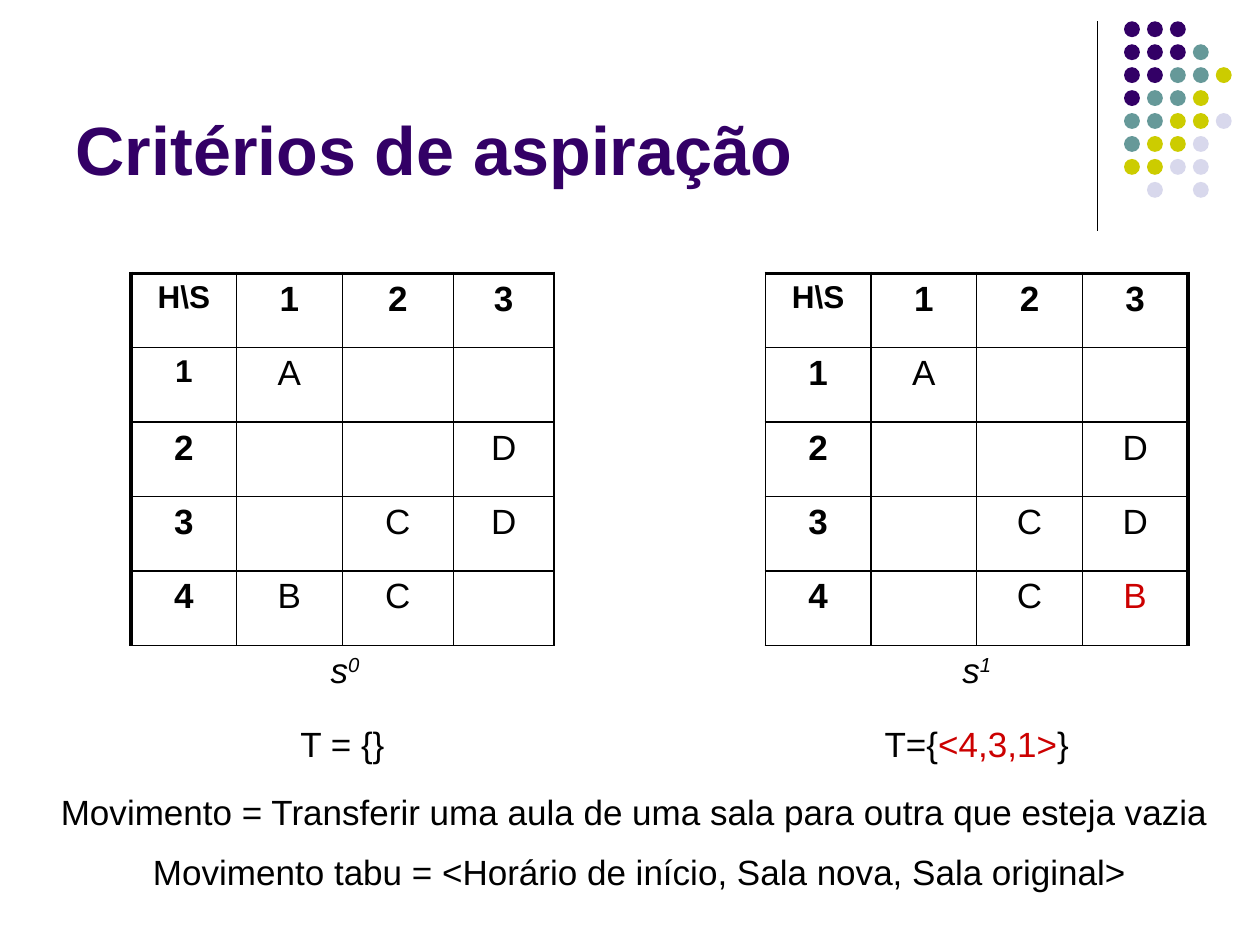
from dataclasses import dataclass
from typing import NamedTuple

from lxml import etree
from pptx import Presentation
from pptx.dml.color import RGBColor
from pptx.enum.dml import MSO_LINE
from pptx.enum.shapes import MSO_CONNECTOR, MSO_SHAPE
from pptx.enum.text import MSO_ANCHOR, MSO_AUTO_SIZE, PP_ALIGN
from pptx.oxml.ns import qn
from pptx.util import Cm, Pt

OVAL = MSO_SHAPE.OVAL
STRAIGHT = MSO_CONNECTOR.STRAIGHT
SOLID = MSO_LINE.SOLID
CENTER = PP_ALIGN.CENTER
LEFT = PP_ALIGN.LEFT
TOP = MSO_ANCHOR.TOP
BOTTOM = MSO_ANCHOR.BOTTOM
GROW = MSO_AUTO_SIZE.SHAPE_TO_FIT_TEXT

BLACK = RGBColor(0x00, 0x00, 0x00)
RED = RGBColor(0xCC, 0x00, 0x00)
PURPLE = RGBColor(0x33, 0x00, 0x66)
TEAL = RGBColor(0x66, 0x99, 0x99)
OLIVE = RGBColor(0xCC, 0xCC, 0x00)
LAVENDER = RGBColor(0xD8, 0xD8, 0xEC)

PLAIN = {"name": "Arial", "size": Pt(20), "bold": False}
BOLD = PLAIN | {"bold": True}
SMALL_BOLD = BOLD | {"size": Pt(18)}
ITALIC = PLAIN | {"italic": True}
HEADING = BOLD | {"size": Pt(39)}

DOT_COLORS = {"P": PURPLE, "T": TEAL, "O": OLIVE, "L": LAVENDER}
DOT_ROWS = ["PPP", "PPPT", "PPTTO", "PTTO", "TTOOL", "TOOL", "OOLL", " L L"]
DOT_LEFT, DOT_TOP, DOT_SIZE = 22.66, 0.43, 0.32
DOT_PITCH = 1.85 / 4

ROW_HEIGHT = 1.5
COLUMN_WIDTHS = [2.13, 2.13, 2.24, 2.03] + [2.13] * 6
NO_STYLE = "{2D5ABB26-0587-4C30-8999-92F81FD0307C}"
THIN, THICK = Pt(1), Pt(2.25)
HEADER = ["H\\S", "1", "2", "3"]


class Span(NamedTuple):
    text: str
    format: dict
    color: RGBColor = BLACK
    baseline: int = 0


@dataclass
class Schedule:
    column: int
    lessons: list[str]
    small_labels: set[tuple[int, int]]
    state: str
    tabu_list: list[Span]
    moved: tuple[int, int] | None = None


@dataclass
class Remark:
    left: float
    top: float
    width: float
    text: str


SCHEDULES = [
    Schedule(0, ["A  ", "  D", " CD", "BC "], {(0, 0), (1, 0)}, "0",
             [Span("T = {}", PLAIN)]),
    Schedule(6, ["A  ", "  D", " CD", " CB"], {(0, 0)}, "1",
             [Span("T={", PLAIN), Span("<4,3,1>", PLAIN, RED), Span("}", PLAIN)],
             moved=(4, 3)),
]
REMARKS = [
    Remark(0.89, 15.82, 23.8,
           "Movimento = Transferir uma aula de uma sala para outra que esteja vazia"),
    Remark(1.5, 17.02, 22.8,
           "Movimento tabu = <Horário de início, Sala nova, Sala original>"),
]


def write(frame, spans: list[Span], align=CENTER, space_percent: int = 0) -> None:
    paragraph = frame.paragraphs[0]
    paragraph.alignment = align
    if space_percent:
        before = etree.Element(qn("a:spcBef"))
        etree.SubElement(before, qn("a:spcPct"), val=str(space_percent * 1000))
        paragraph._p.get_or_add_pPr().insert(0, before)
    for span in spans:
        run = paragraph.add_run()
        run.text = span.text
        for attribute, value in span.format.items():
            setattr(run.font, attribute, value)
        run.font.color.rgb = span.color
        if span.baseline:
            run._r.get_or_add_rPr().set("baseline", str(span.baseline * 1000))


def draw_border(cell, widths: dict) -> None:
    properties = cell._tc.get_or_add_tcPr()
    for side, width in widths.items():
        line = etree.SubElement(properties, qn(f"a:ln{side}"), w=str(width))
        fill = etree.SubElement(line, qn("a:solidFill"))
        etree.SubElement(fill, qn("a:srgbClr"), val=str(BLACK))


def draw_ornament(slide) -> None:
    divider = slide.shapes.add_connector(STRAIGHT, Cm(22.12), Cm(0.43), Cm(22.12), Cm(4.65))
    divider.line.color.rgb = BLACK
    divider.line.width = Pt(0.75)
    divider.line.dash_style = SOLID
    etree.SubElement(divider._element.spPr, qn("a:effectLst"))
    dots = slide.shapes.add_group_shape()
    for row, codes in enumerate(DOT_ROWS):
        for column, code in enumerate(codes):
            if code == " ":
                continue
            dot = dots.shapes.add_shape(
                OVAL, Cm(DOT_LEFT + column * DOT_PITCH), Cm(DOT_TOP + row * DOT_PITCH),
                Cm(DOT_SIZE), Cm(DOT_SIZE))
            dot.shadow.inherit = False
            dot.fill.solid()
            dot.fill.fore_color.rgb = DOT_COLORS[code]
            dot.line.fill.background()


def fill_schedule(table, schedule: Schedule) -> None:
    first = schedule.column
    rows = [HEADER] + [[str(hour), *rooms] for hour, rooms in enumerate(schedule.lessons, 1)]
    for row, entries in enumerate(rows):
        for offset, entry in enumerate(entries):
            column = first + offset
            cell = table.cell(row, column)
            draw_border(cell, {
                "L": THICK if column == 0 else THIN,
                "R": THICK if column == len(COLUMN_WIDTHS) - 1 else THIN,
                "T": THICK if row == 0 else THIN,
                "B": THIN,
            })
            if entry == " ":
                continue
            label = BOLD if row == 0 or offset == 0 else PLAIN
            style = SMALL_BOLD if (row, offset) in schedule.small_labels else label
            color = RED if (row, offset) == schedule.moved else BLACK
            write(cell.text_frame, [Span(entry, style, color)], space_percent=20)

    state = table.cell(5, first + 1)
    state.merge(table.cell(5, first + 2))
    write(state.text_frame,
          [Span("s", ITALIC), Span(schedule.state, ITALIC, baseline=30)], space_percent=20)
    tabu = table.cell(6, first)
    tabu.merge(table.cell(6, first + 3))
    write(tabu.text_frame, schedule.tabu_list, space_percent=20)


def draw_schedules(slide) -> None:
    table = slide.shapes.add_table(
        7, len(COLUMN_WIDTHS), Cm(2.64), Cm(5.51),
        Cm(sum(COLUMN_WIDTHS)), Cm(7 * ROW_HEIGHT)).table
    table.first_row = table.horz_banding = False
    table._tbl.tblPr.find(qn("a:tableStyleId")).text = NO_STYLE
    for column, width in zip(table.columns, COLUMN_WIDTHS):
        column.width = Cm(width)
    for row in table.rows:
        row.height = Cm(ROW_HEIGHT)
    for schedule in SCHEDULES:
        fill_schedule(table, schedule)
    for cell in table.iter_cells():
        cell.vertical_anchor = TOP
        cell.fill.background()


def draw_remark(slide, remark: Remark) -> None:
    box = slide.shapes.add_textbox(Cm(remark.left), Cm(remark.top), Cm(remark.width), Cm(1.1))
    box.text_frame.word_wrap = True
    box.text_frame.auto_size = GROW
    write(box.text_frame, [Span(remark.text, PLAIN)], space_percent=50)


def main() -> None:
    deck = Presentation()
    deck.slide_width, deck.slide_height = Cm(25.4), Cm(19.05)
    slide = deck.slides.add_slide(deck.slide_layouts[5])
    draw_ornament(slide)
    title = slide.shapes.title
    place = {"left": Cm(1.27), "top": Cm(0.33), "width": Cm(20.96), "height": Cm(3.61)}
    for attribute, value in place.items():
        setattr(title, attribute, value)
    title.text_frame.vertical_anchor = BOTTOM
    write(title.text_frame, [Span("Critérios de aspiração", HEADING, PURPLE)], LEFT)
    draw_schedules(slide)
    for remark in REMARKS:
        draw_remark(slide, remark)
    deck.save("out.pptx")


if __name__ == "__main__":
    main()
